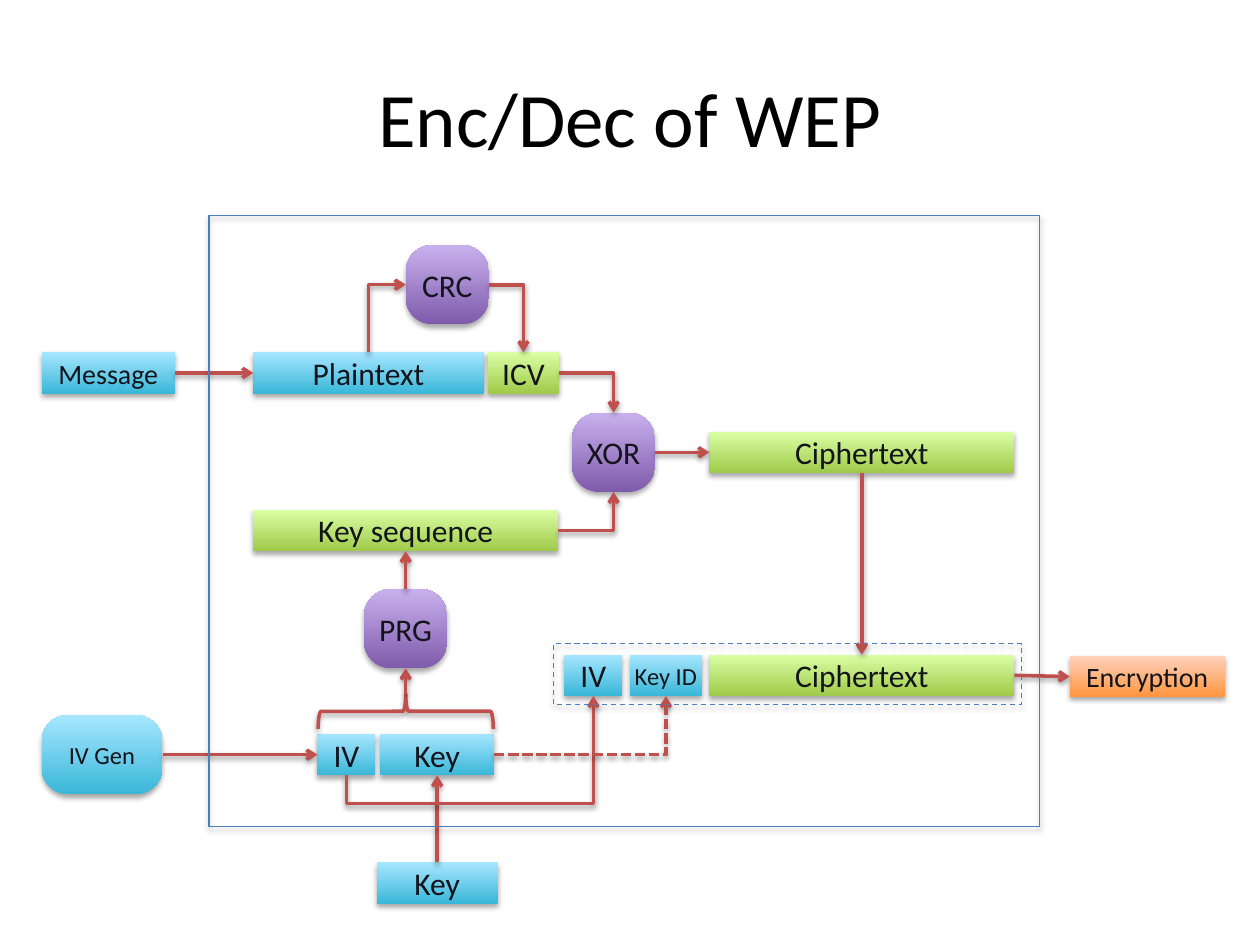
from lxml.etree import SubElement
from pptx import Presentation
from pptx.dml.color import RGBColor
from pptx.enum.dml import MSO_LINE
from pptx.enum.shapes import MSO_CONNECTOR, MSO_SHAPE
from pptx.enum.text import MSO_ANCHOR, PP_ALIGN
from pptx.oxml.ns import qn
from pptx.util import Inches, Pt

THEME = {
    "font": "Calibri",
    "title": (44, "000000"),
    "ink": "13141C",
    "wire": ("C0504D", 2),
    "frame": ("4B7EBC", 0.75),
    "blue": ("39B7D8", "A7E6FF"),
    "green": ("A0CA4A", "DAFFA5"),
    "purple": ("7F5BAB", "C8B0ED"),
    "orange": ("FF953E", "FFD2BD"),
    "large": 18, "medium": 16, "small": 14,
}
TITLE = "Enc/Dec of WEP"
ROWS = {"crc": 2.26, "plain": 2.96, "xor": 3.59, "sequence": 4.21, "prg": 4.99,
        "output": 5.36, "encrypt": 5.37, "seed": 5.99, "secret": 7.01}
COLS = {"source": 0.33, "text": 2.01, "cipher": 5.63, "result": 8.49}
FLAT, TALL, WIDE, STEP = 0.33, 0.63, 2.42, 0.66

BOXES = {
    "message": ("Message", COLS["source"], "plain", 1.06, FLAT, "blue", "medium"),
    "plaintext": ("Plaintext", COLS["text"], "plain", 1.83, FLAT, "blue", "large"),
    "icv": ("ICV", 3.87, "plain", 0.57, FLAT, "green", "large"),
    "crc": ("CRC", 3.22, "crc", STEP, TALL, "purple", "large"),
    "xor": ("XOR", 4.54, "xor", STEP, TALL, "purple", "large"),
    "cipher": ("Ciphertext", COLS["cipher"], "xor", WIDE, FLAT, "green", "large"),
    "sequence": ("Key sequence", COLS["text"], "sequence", WIDE, FLAT, "green", "large"),
    "prg": ("PRG", 2.89, "prg", STEP, TALL, "purple", "large"),
    "iv_gen": ("IV Gen", COLS["source"], "seed", 0.96, TALL, "blue", "small"),
    "iv": ("IV", 2.52, "seed", 0.46, FLAT, "blue", "large"),
    "key": ("Key", 3.02, "seed", 0.9, FLAT, "blue", "large"),
    "secret": ("Key", 2.99, "secret", 0.96, FLAT, "blue", "large"),
    "iv_out": ("IV", 4.48, "output", 0.46, FLAT, "blue", "large"),
    "key_id": ("Key ID", 5.0, "output", 0.57, FLAT, "blue", "small"),
    "cipher_out": ("Ciphertext", COLS["cipher"], "output", WIDE, FLAT, "green", "large"),
    "encryption": ("Encryption", COLS["result"], "encrypt", 1.23, FLAT, "orange", "medium"),
}
TOP, LEFT, BOTTOM, RIGHT = range(4)
STRAIGHT = [
    ("message", RIGHT, "plaintext", LEFT),
    ("iv_gen", RIGHT, "iv", LEFT),
    ("xor", RIGHT, "cipher", LEFT),
    ("cipher", BOTTOM, "cipher_out", TOP),
    ("prg", TOP, "sequence", BOTTOM),
    ("secret", TOP, "key", BOTTOM),
    ("cipher_out", RIGHT, "encryption", LEFT),
]
BENT = [
    ("plaintext", TOP, "crc", LEFT, None),
    ("crc", RIGHT, "icv", TOP, None),
    ("icv", RIGHT, "xor", TOP, None),
    ("sequence", RIGHT, "xor", BOTTOM, None),
    ("iv", BOTTOM, "iv_out", BOTTOM, None),
    ("key", RIGHT, "key_id", BOTTOM, MSO_LINE.SQUARE_DOT),
]
FRAMES = [(1.66, 1.71, 6.59, 4.85, None), (4.39, 5.11, 3.72, 0.48, MSO_LINE.DASH)]
BRACE = (3.08, 4.95, 0.28, 1.39)


def add_shadow(s, distance, alpha):
    effects = SubElement(s._element.spPr, qn("a:effectLst"))
    shadow = SubElement(effects, qn("a:outerShdw"), blurRad="40000",
                        dist=str(Pt(distance)), dir="5400000", rotWithShape="0")
    color = SubElement(shadow, qn("a:srgbClr"), val="000000")
    SubElement(color, qn("a:alpha"), val=str(alpha * 1000))


def style_line(s, style, dash=None):
    color, width = THEME[style]
    s.line.color.rgb = RGBColor.from_string(color)
    s.line.width = Pt(width)
    if dash:
        s.line.dash_style = dash


def add_text(s, text, size, color):
    tf = s.text_frame
    tf.word_wrap = True
    tf.vertical_anchor = MSO_ANCHOR.MIDDLE
    tf.margin_left = tf.margin_right = tf.margin_top = tf.margin_bottom = 0
    p = tf.paragraphs[0]
    p.alignment = PP_ALIGN.CENTER
    r = p.add_run()
    r.text = text
    r.font.name = THEME["font"]
    r.font.size = Pt(size)
    r.font.color.rgb = RGBColor.from_string(color)


def add_box(shapes, text, left, row, width, height, fill, size):
    kind = MSO_SHAPE.ROUNDED_RECTANGLE if height == TALL else MSO_SHAPE.RECTANGLE
    s = shapes.add_shape(kind, Inches(left), Inches(ROWS[row] - height / 2),
                         Inches(width), Inches(height))
    if height == TALL:
        s.adjustments[0] = 0.34
    s.fill.gradient()
    s.fill.gradient_angle = 90
    for stop, color in zip(s.fill.gradient_stops, THEME[fill]):
        stop.color.rgb = RGBColor.from_string(color)
    s.line.fill.background()
    add_shadow(s, 1.8, 35)
    add_text(s, text, THEME[size], THEME["ink"])
    return s


def add_outline(shapes, kind, area, style, dash=None):
    s = shapes.add_shape(kind, *map(Inches, area))
    s.fill.background()
    style_line(s, style, dash)
    add_shadow(s, 1.8, 35)
    return s


def side_point(s, side):
    across = {LEFT: 0, RIGHT: 2}.get(side, 1)
    down = {TOP: 0, BOTTOM: 2}.get(side, 1)
    return s.left + s.width * across // 2, s.top + s.height * down // 2


def finish_wire(c, dash=None):
    style_line(c, "wire", dash)
    SubElement(c.line._get_or_add_ln(), qn("a:tailEnd"), type="arrow")
    add_shadow(c, 1.6, 38)


def add_bent(shapes, start, start_side, end, end_side, dash):
    x1, y1 = side_point(start, start_side)
    x2, y2 = side_point(end, end_side)
    turned = start_side in (TOP, BOTTOM)
    if turned:
        cx, cy = (x1 + x2) // 2, (y1 + y2) // 2
        w, h = abs(y2 - y1), abs(x2 - x1)
        x1, y1, x2, y2 = cx - w // 2, cy - h // 2, cx + w // 2, cy + h // 2
    c = shapes.add_connector(MSO_CONNECTOR.ELBOW, x1, y1, x2, y2)
    geometry = c._element.spPr.find(qn("a:prstGeom"))
    if turned:
        xfrm = c._element.spPr.find(qn("a:xfrm"))
        for name, value in (("rot", "5400000"), ("flipH", "1"), ("flipV", "1")):
            xfrm.set(name, value)
    if start_side == end_side:
        guides = geometry.find(qn("a:avLst"))
        SubElement(guides, qn("a:gd"), name="adj1", fmla="val -35400")
    else:
        geometry.set("prst", "bentConnector2")
    finish_wire(c, dash)


def main():
    prs = Presentation()
    prs.slide_width, prs.slide_height = Inches(10), Inches(7.5)
    shapes = prs.slides.add_slide(prs.slide_layouts[6]).shapes

    title = shapes.add_textbox(*map(Inches, (0.5, 0.3, 9, 1.25)))
    add_text(title, TITLE, *THEME["title"])
    boxes = {name: add_box(shapes, *box) for name, box in BOXES.items()}

    for start, start_side, end, end_side in STRAIGHT:
        c = shapes.add_connector(MSO_CONNECTOR.STRAIGHT, 0, 0, 0, 0)
        c.begin_connect(boxes[start], start_side)
        c.end_connect(boxes[end], end_side)
        finish_wire(c)
    for start, start_side, end, end_side, dash in BENT:
        add_bent(shapes, boxes[start], start_side, boxes[end], end_side, dash)

    brace = add_outline(shapes, MSO_SHAPE.LEFT_BRACE, BRACE, "wire")
    brace.rotation = 90
    tip_x = brace.left + brace.width // 2
    tip_y = brace.top + (brace.height - brace.width) // 2
    c = shapes.add_connector(MSO_CONNECTOR.STRAIGHT, tip_x, tip_y, tip_x, tip_y)
    c.end_connect(boxes["prg"], BOTTOM)
    finish_wire(c)

    for *area, dash in FRAMES:
        add_outline(shapes, MSO_SHAPE.RECTANGLE, area, "frame", dash)
    prs.save("out.pptx")


if __name__ == "__main__":
    main()
